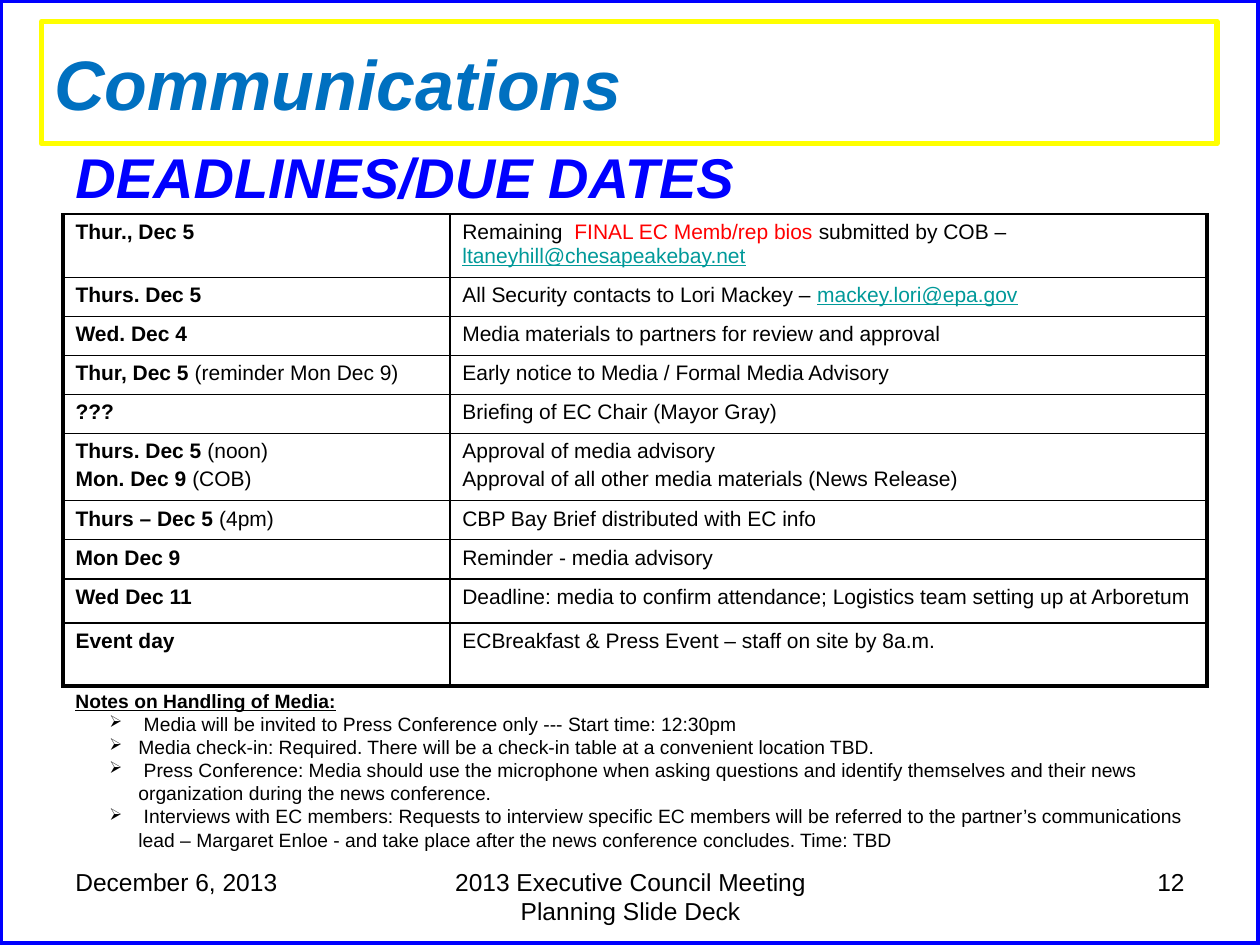
from lxml import etree
from pptx import Presentation
from pptx.dml.color import RGBColor
from pptx.enum.shapes import MSO_SHAPE
from pptx.enum.text import MSO_ANCHOR, MSO_AUTO_SIZE, PP_ALIGN
from pptx.oxml.ns import qn
from pptx.util import Inches, Pt

FONT = "Arial"
COLORS = {"black": "000000", "title": "0070C0", "blue": "0000FF",
          "yellow": "FFFF00", "red": "FF0000", "link": "009999"}
RECTANGLE = MSO_SHAPE.RECTANGLE
LEFT, CENTER, RIGHT = PP_ALIGN.LEFT, PP_ALIGN.CENTER, PP_ALIGN.RIGHT
MIDDLE = MSO_ANCHOR.MIDDLE
NO_AUTOFIT = MSO_AUTO_SIZE.NONE

PLAIN = {}
BOLD = {"bold": True}
RED = {"color": "red"}
LINK = {"color": "link", "underline": True}

# Each row: height, date paragraphs, task paragraphs; a paragraph is a list of runs.
DEADLINES = [
    (0.5, [[("Thur., Dec 5", BOLD)]],
     [[("Remaining  ", PLAIN), ("FINAL EC Memb/rep bios ", RED),
       ("submitted by COB – ", PLAIN),
       ("ltaneyhill@chesapeakebay.net", LINK), (" ", PLAIN)]]),
    (0.31, [[("Thurs. Dec 5", BOLD)]],
     [[("All Security contacts to Lori Mackey – ", PLAIN),
       ("mackey.lori@epa.gov", LINK), (" ", PLAIN)]]),
    (0.31, [[("Wed. Dec 4", BOLD)]],
     [[("Media materials to partners for review and approval", PLAIN)]]),
    (0.31, [[("Thur, Dec 5 ", BOLD), ("(reminder Mon Dec 9)", PLAIN)]],
     [[("Early notice to Media / Formal Media Advisory", PLAIN)]]),
    (0.31, [[("???", BOLD)]],
     [[("Briefing of EC Chair (Mayor Gray)", PLAIN)]]),
    (0.53, [[("Thurs. Dec 5 ", BOLD), ("(noon)", PLAIN)],
            [("Mon. Dec 9 ", BOLD), ("(COB)", PLAIN)]],
     [[("Approval of media advisory", PLAIN)],
      [("Approval of all other media materials (News Release)", PLAIN)]]),
    (0.31, [[("Thurs – Dec 5 ", BOLD), ("(4pm)", PLAIN)]],
     [[("CBP Bay Brief distributed with EC info", PLAIN)]]),
    (0.31, [[("Mon Dec 9", BOLD)]],
     [[("Reminder - media advisory", PLAIN)]]),
    (0.35, [[("Wed Dec 11", BOLD)]],
     [[("Deadline: media to confirm attendance; Logistics team setting up at Arboretum",
        PLAIN)]]),
    (0.5, [[("Event day", BOLD)]],
     [[("ECBreakfast & Press Event – staff on site by 8a.m.", PLAIN)]]),
]
MEDIA_NOTES = [
    " Media will be invited to Press Conference only --- Start time: 12:30pm",
    "Media check-in: Required. There will be a check-in table at a convenient "
    "location TBD.",
    " Press Conference: Media should use the microphone when asking questions and "
    "identify themselves and their news organization during the news conference.",
    " Interviews with EC members: Requests to interview specific EC members will be "
    "referred to the partner’s communications lead – Margaret Enloe - and take place "
    "after the news conference concludes. Time: TBD",
]


def rgb(name):
    return RGBColor.from_string(COLORS[name])


def format_run(run, size, color="black", bold=False, italic=False, underline=False):
    font = run.font
    font.name, font.size = FONT, Pt(size)
    font.bold, font.italic, font.underline = bold, italic, underline
    font.color.rgb = rgb(color)


def add_text(slide, box, lines, size, align=LEFT, **style):
    """Add a wrapping text box with one paragraph per line; return its paragraphs."""
    text_frame = slide.shapes.add_textbox(*map(Inches, box)).text_frame
    text_frame.word_wrap = True
    text_frame.text = "\n".join(lines)
    for paragraph in text_frame.paragraphs:
        paragraph.alignment = align
        format_run(paragraph.runs[0], size, **style)
    return text_frame.paragraphs


def add_title(slide, box):
    title = slide.shapes.title
    title.left, title.top, title.width, title.height = map(Inches, box)
    title.line.color.rgb = rgb("yellow")
    title.line.width = Pt(3)
    text_frame = title.text_frame
    text_frame.text = "Communications"
    text_frame.vertical_anchor = MIDDLE
    text_frame.auto_size = NO_AUTOFIT
    paragraph = text_frame.paragraphs[0]
    paragraph.alignment = LEFT
    format_run(paragraph.runs[0], 40, "title", bold=True, italic=True)


def add_frame(slide, box):
    frame = slide.shapes.add_shape(RECTANGLE, *map(Inches, box))
    frame.shadow.inherit = False
    frame.fill.background()
    frame.line.color.rgb = rgb("blue")
    frame.line.width = Pt(4)


def set_borders(cell, widths):
    """Draw black borders, with widths in points for left, right, top and bottom."""
    properties = cell._tc.get_or_add_tcPr()
    for index, (side, width) in enumerate(zip("LRTB", widths)):
        line = etree.Element(qn(f"a:ln{side}"), w=str(Pt(width)))
        fill = etree.SubElement(line, qn("a:solidFill"))
        etree.SubElement(fill, qn("a:srgbClr"), val=COLORS["black"])
        properties.insert(index, line)


def fill_cell(cell, paragraphs):
    cell.fill.background()
    text_frame = cell.text_frame
    for index, runs in enumerate(paragraphs):
        paragraph = text_frame.add_paragraph() if index else text_frame.paragraphs[0]
        paragraph.space_before = Pt(2.4 if index else 0)
        for text, style in runs:
            run = paragraph.add_run()
            run.text = text
            format_run(run, 12, **style)


def add_deadlines(slide, box):
    thick, thin = 2.25, 1
    table = slide.shapes.add_table(len(DEADLINES), 2, *map(Inches, box)).table
    table.first_row = table.horz_banding = False
    table.columns[0].width = Inches(3.07)
    table.columns[1].width = Inches(box[2] - 3.07)
    for index, (height, *contents) in enumerate(DEADLINES):
        table.rows[index].height = Inches(height)
        bottom = thick if index == len(DEADLINES) - 1 else thin
        for column, paragraphs in enumerate(contents):
            cell = table.cell(index, column)
            fill_cell(cell, paragraphs)
            sides = (thin, thick) if column else (thick, thin)
            set_borders(cell, (*sides, thin, bottom))


def add_media_notes(slide, box):
    heading, *notes = add_text(
        slide, box, ["Notes on Handling of Media:", *MEDIA_NOTES], 11)
    format_run(heading.runs[0], 11, bold=True, underline=True)
    for paragraph in notes:
        paragraph.level = 1
        properties = paragraph._p.get_or_add_pPr()
        properties.set("marL", str(Inches(0.5)))
        properties.set("indent", str(Inches(-0.23)))
        etree.SubElement(properties, qn("a:buSzPct"), val="85000")
        etree.SubElement(properties, qn("a:buChar"), char="➢")


def add_footer(slide, box):
    left, top, width, height = box
    side = 2.33
    add_text(slide, (left, top, side, height), ["December 6, 2013"], 14)
    add_text(slide, (left + 2.92, top, 3.17, height),
             ["2013 Executive Council Meeting Planning Slide Deck"], 14, CENTER)
    add_text(slide, (left + width - side, top, side, height), ["12"], 14, RIGHT)


def main():
    presentation = Presentation()
    presentation.slide_width, presentation.slide_height = Inches(10), Inches(7.5)
    slide = presentation.slides.add_slide(presentation.slide_layouts[5])
    add_title(slide, (0.33, 0.17, 9.33, 0.97))
    add_frame(slide, (0, 0, 10, 7.5))
    add_text(slide, (0.5, 1.08, 9.33, 0.63), ["DEADLINES/DUE DATES"], 32,
             color="blue", bold=True, italic=True)
    add_deadlines(slide, (0.5, 1.7, 9.08, 3.72))
    add_footer(slide, (0.5, 6.83, 9, 0.52))
    add_media_notes(slide, (0.5, 5.42, 9.25, 1.4))
    presentation.save("out.pptx")


if __name__ == "__main__":
    main()
